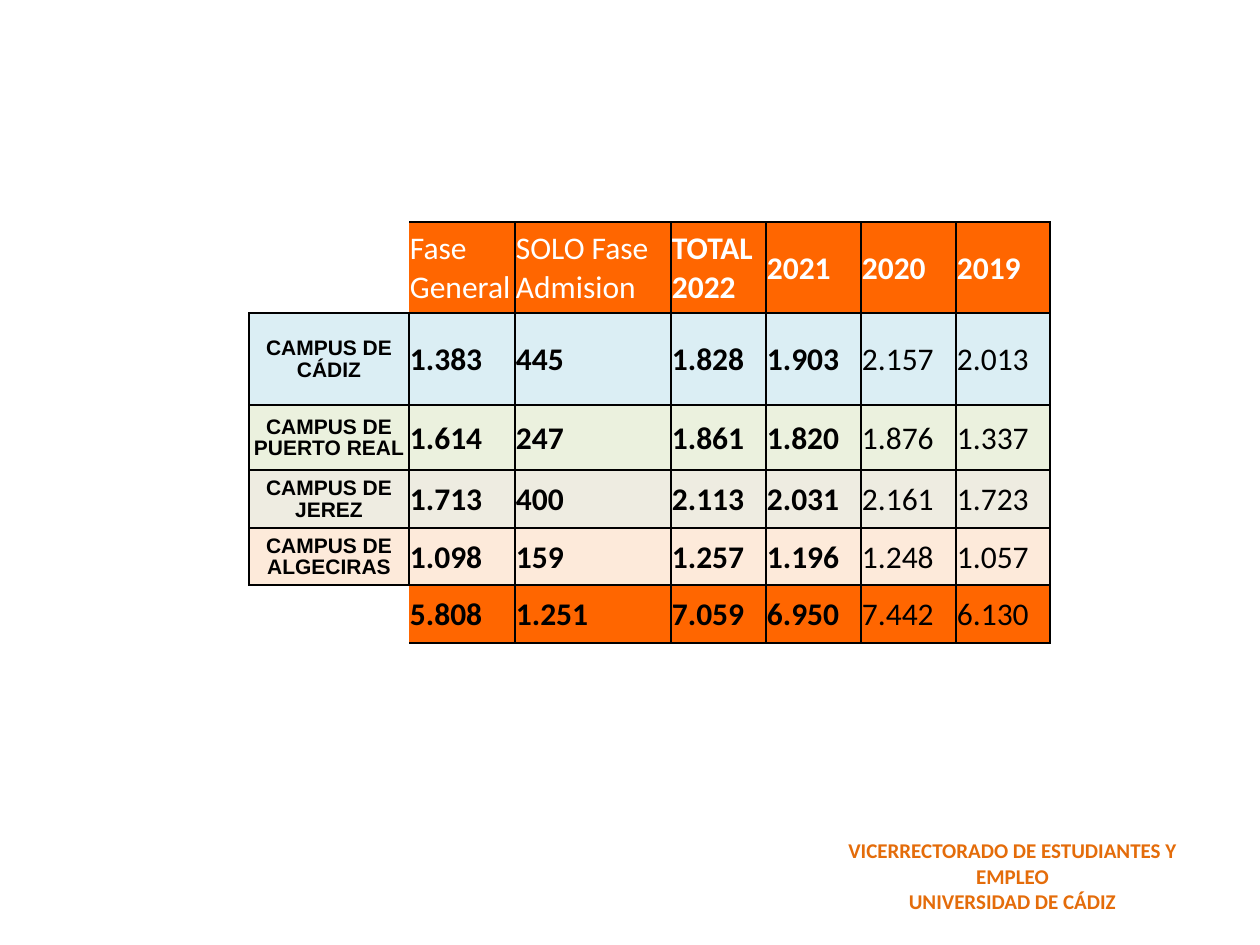
import lxml.etree
import pptx
import pptx.dml.color
import pptx.enum.text
import pptx.oxml.ns
import pptx.util

COLORS = {
    "black": "000000",
    "white": "FFFFFF",
    "orange": "FF6600",
    "signature": "E46C0A",
    "cadiz": "DBEEF4",
    "puerto_real": "EBF1DE",
    "jerez": "EEECE1",
    "algeciras": "FDEADA",
}
HEADINGS = ["", "Fase General", "SOLO Fase Admision", "TOTAL 2022", "2021", "2020", "2019"]
CAMPUSES = [
    ("cadiz", ["CAMPUS DE CÁDIZ", "1.383", "445", "1.828", "1.903", "2.157", "2.013"]),
    ("puerto_real", ["CAMPUS DE PUERTO REAL", "1.614", "247", "1.861", "1.820", "1.876", "1.337"]),
    ("jerez", ["CAMPUS DE JEREZ", "1.713", "400", "2.113", "2.031", "2.161", "1.723"]),
    ("algeciras", ["CAMPUS DE ALGECIRAS", "1.098", "159", "1.257", "1.196", "1.248", "1.057"]),
]
TOTALS = ["", "5.808", "1.251", "7.059", "6.950", "7.442", "6.130"]
ADMISSIONS = [("orange", HEADINGS), *CAMPUSES, ("orange", TOTALS)]
COLUMN_WIDTHS = [160, 106, 156, 95, 95, 95, 94]
ROW_HEIGHTS = [91, 92, 65, 58, 57, 58]
FIRST_BOLD_HEADING = 3
FIRST_PLAIN_YEAR = 5


def px(length):
    return pptx.util.Emu(round(length * 914400 / 126))


class Deck:
    body_font = "Calibri"
    label_font = "Arial"
    thin, thick = 0.91, 1.47

    def __init__(self, width, height):
        self.presentation = pptx.Presentation()
        self.presentation.slide_width = px(width)
        self.presentation.slide_height = px(height)
        self.slide = self.presentation.slides.add_slide(self.presentation.slide_layouts[6])

    def color(self, name):
        return pptx.dml.color.RGBColor.from_string(COLORS[name])

    def run(self, paragraph, text, size, color, bold, font):
        run = paragraph.add_run()
        run.text = text
        run.font.name = font
        run.font.size = pptx.util.Pt(size)
        run.font.bold = bold
        run.font.color.rgb = self.color(color)

    def borders(self, cell, widths):
        properties = cell._tc.get_or_add_tcPr()
        for position, (side, width) in enumerate(zip("LRTB", widths)):
            line = lxml.etree.Element(pptx.oxml.ns.qn(f"a:ln{side}"))
            line.set("w", str(pptx.util.Pt(width)))
            if width:
                fill = lxml.etree.SubElement(line, pptx.oxml.ns.qn("a:solidFill"))
                lxml.etree.SubElement(fill, pptx.oxml.ns.qn("a:srgbClr")).set("val", COLORS["black"])
            else:
                lxml.etree.SubElement(line, pptx.oxml.ns.qn("a:noFill"))
            properties.insert(position, line)

    def cell(self, cell, text, fill, color, bold, is_label):
        cell.vertical_anchor = pptx.enum.text.MSO_ANCHOR.MIDDLE
        cell.margin_left = cell.margin_right = px(1)
        cell.margin_top = px(2 if is_label else 1)
        cell.margin_bottom = 0
        if not text:
            cell.fill.background()
            return
        cell.fill.solid()
        cell.fill.fore_color.rgb = self.color(fill)
        paragraph = cell.text_frame.paragraphs[0]
        paragraph.line_spacing = 0.93 if is_label else 1.02
        if is_label:
            paragraph.alignment = pptx.enum.text.PP_ALIGN.CENTER
            self.run(paragraph, text, 12, color, bold, self.label_font)
        else:
            self.run(paragraph, text, 18, color, bold, self.body_font)

    def table(self, left, top, widths, heights, rows):
        frame = self.slide.shapes.add_table(
            len(rows), len(widths), px(left), px(top), px(sum(widths)), px(sum(heights)))
        table = frame.table
        table.first_row = table.horz_banding = False
        for column, width in zip(table.columns, widths):
            column.width = px(width)
        for row, height in zip(table.rows, heights):
            row.height = px(height)
        last_row, last_column = len(rows) - 1, len(widths) - 1
        for r, (fill, texts) in enumerate(rows):
            for c, text in enumerate(texts):
                cell = table.cell(r, c)
                is_heading = r == 0
                bold = c >= FIRST_BOLD_HEADING if is_heading else c < FIRST_PLAIN_YEAR
                self.cell(cell, text, fill, "white" if is_heading else "black", bold, c == 0)
                if text:
                    left_width = 0 if c == 1 and not texts[0] else self.thin
                    right_width = self.thick if c == last_column else self.thin
                    self.borders(cell, [left_width, right_width, self.thin, self.thin])
                else:
                    self.borders(cell, [0, 0, self.thin if r == last_row else 0,
                                        self.thin if r == 0 else 0])

    def signature(self, left, top, width, height, lines):
        frame = self.slide.shapes.add_textbox(px(left), px(top), px(width), px(height)).text_frame
        frame.word_wrap = True
        frame.auto_size = pptx.enum.text.MSO_AUTO_SIZE.SHAPE_TO_FIT_TEXT
        frame.margin_left = frame.margin_right = px(15)
        frame.margin_top = frame.margin_bottom = px(8)
        for index, line in enumerate(lines):
            paragraph = frame.add_paragraph() if index else frame.paragraphs[0]
            paragraph.alignment = pptx.enum.text.PP_ALIGN.CENTER
            self.run(paragraph, line, 12, "signature", True, self.body_font)


def main():
    deck = Deck(1260, 945)
    deck.table(249, 222, COLUMN_WIDTHS, ROW_HEIGHTS, ADMISSIONS)
    deck.signature(799, 830, 427, 90,
                   ["VICERRECTORADO DE ESTUDIANTES Y EMPLEO", "UNIVERSIDAD DE CÁDIZ"])
    deck.presentation.save("out.pptx")


if __name__ == "__main__":
    main()
